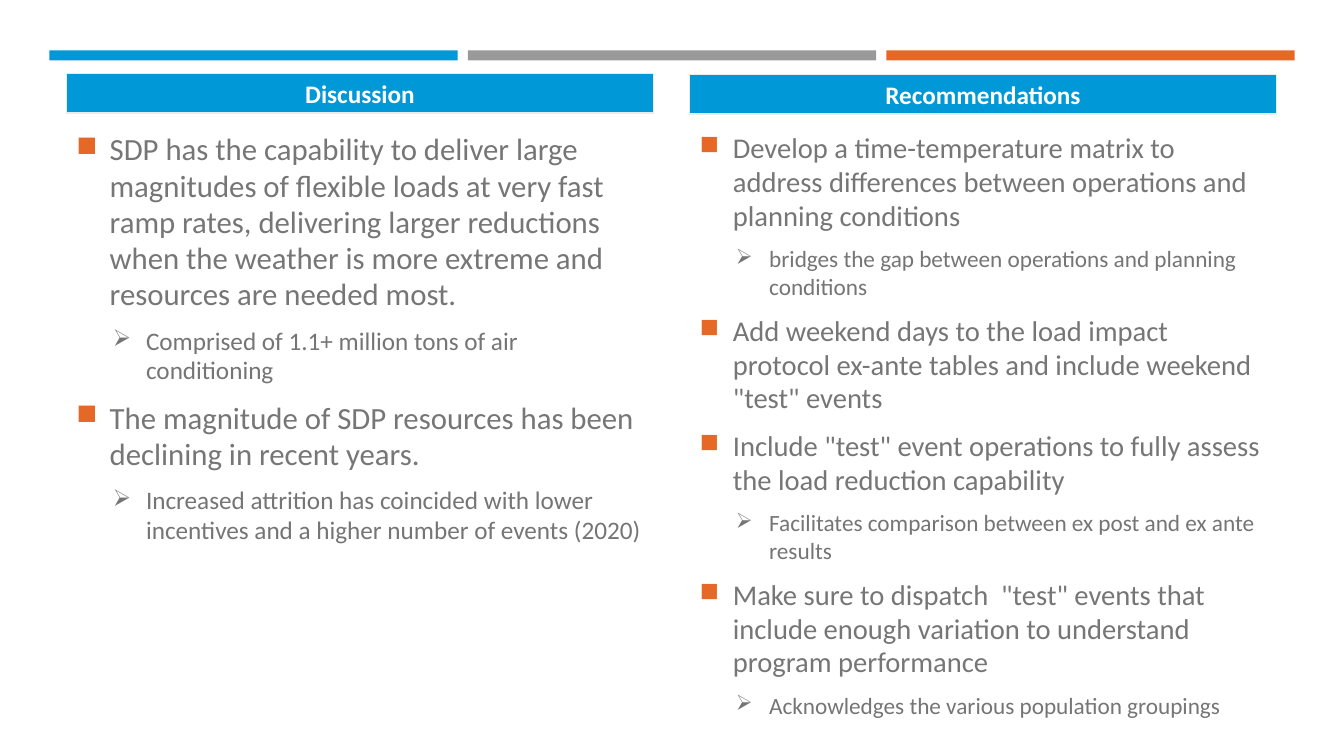
"""Build the discussion and recommendations slide."""
from dataclasses import dataclass

from lxml.etree import SubElement
from pptx import Presentation
from pptx.dml.color import RGBColor
from pptx.enum.shapes import MSO_SHAPE as Preset
from pptx.enum.text import MSO_ANCHOR as Anchor, PP_ALIGN as Align
from pptx.oxml.ns import qn
from pptx.util import Pt

PX = 9144
FONT = "Calibri"
COLORS = {
    "blue": "0098D7",
    "gray": "999999",
    "orange": "E66827",
    "outline": "EBEBEB",
    "text": "767676",
    "detail": "757575",
    "white": "FFFFFF",
}


@dataclass(frozen=True)
class Bullet:
    char: str
    color: str
    text_color: str
    margin: int


@dataclass(frozen=True)
class Column:
    title: str
    left: int
    header_top: int
    height: int
    sizes: tuple[float, float]
    items: tuple[tuple[int, str], ...]


BULLETS = (Bullet("■", "orange", "text", 33), Bullet("➢", "detail", "detail", 69))
HANGING = 33
COLUMN_WIDTH = 582
HEADER_HEIGHT = 39
BODY_TOP = 126
BARS = ("blue", "gray", "orange")
BAR_LEFT, BAR_TOP, BAR_WIDTH, BAR_HEIGHT, BAR_STEP = 49, 50, 405, 10, 415

COLUMNS = (
    Column("Discussion", 66, 73, 544, (22, 18), (
        (0, "SDP has the capability to deliver large magnitudes of flexible loads at very "
            "fast ramp rates, delivering larger reductions when the weather is more extreme "
            "and resources are needed most."),
        (1, "Comprised of 1.1+ million tons of air conditioning"),
        (0, "The magnitude of SDP resources has been declining in recent years."),
        (1, "Increased attrition has coincided with lower incentives and a higher number "
            "of events (2020)"),
    )),
    Column("Recommendations", 684, 74, 581, (20.4, 16.6), (
        (0, "Develop a time-temperature matrix to address differences between operations "
            "and planning conditions"),
        (1, "bridges the gap between operations and planning conditions"),
        (0, "Add weekend days to the load impact protocol ex-ante tables and include "
            "weekend \"test\" events"),
        (0, "Include \"test\" event operations to fully assess the load reduction capability"),
        (1, "Facilitates comparison between ex post and ex ante results"),
        (0, "Make sure to dispatch  \"test\" events that include enough variation to "
            "understand program performance"),
        (1, "Acknowledges the various population groupings"),
    )),
)


def rgb(name: str) -> RGBColor:
    return RGBColor.from_string(COLORS[name])


def add_bullet(paragraph, bullet: Bullet) -> None:
    properties = paragraph._p.get_or_add_pPr()
    properties.set("marL", str(bullet.margin * PX))
    properties.set("indent", str(-HANGING * PX))
    color = SubElement(properties, qn("a:buClr"))
    SubElement(color, qn("a:srgbClr"), val=COLORS[bullet.color])
    SubElement(properties, qn("a:buSzPct"), val="92000")
    SubElement(properties, qn("a:buChar"), char=bullet.char)


def write(paragraph, text: str, *, size: float, color: str, bold: bool = False,
          align: Align = Align.LEFT, before: float = 0, after: float = 0,
          line_spacing: float = 1.0, bullet: Bullet | None = None) -> None:
    paragraph.alignment = align
    paragraph.line_spacing = line_spacing
    paragraph.space_before = Pt(before)
    paragraph.space_after = Pt(after)
    if bullet:
        add_bullet(paragraph, bullet)
    run = paragraph.add_run()
    run.text = text
    run.font.name = FONT
    run.font.size = Pt(size)
    run.font.bold = bold
    run.font.color.rgb = rgb(color)


def add_rectangle(slide, left: int, top: int, width: int, height: int,
                  fill: str, line: str | None = None):
    shape = slide.shapes.add_shape(
        Preset.RECTANGLE, left * PX, top * PX, width * PX, height * PX)
    shape.shadow.inherit = False
    shape.fill.solid()
    shape.fill.fore_color.rgb = rgb(fill)
    if line:
        shape.line.color.rgb = rgb(line)
        shape.line.width = Pt(1)
    else:
        shape.line.fill.background()
    return shape


def add_body(slide, column: Column) -> None:
    box = slide.shapes.add_textbox(
        column.left * PX, BODY_TOP * PX, COLUMN_WIDTH * PX, column.height * PX)
    frame = box.text_frame
    frame.word_wrap = True
    for index, (level, text) in enumerate(column.items):
        paragraph = frame.add_paragraph() if index else frame.paragraphs[0]
        paragraph.level = level
        size = column.sizes[level]
        write(paragraph, text, size=size, color=BULLETS[level].text_color,
              before=round(size * 0.2, 1) if index else 0, after=6,
              line_spacing=0.98, bullet=BULLETS[level])


def add_header(slide, column: Column) -> None:
    header = add_rectangle(slide, column.left, column.header_top, COLUMN_WIDTH,
                           HEADER_HEIGHT, "blue", "outline")
    frame = header.text_frame
    frame.vertical_anchor = Anchor.MIDDLE
    frame.margin_left = frame.margin_right = 9 * PX
    frame.margin_top = frame.margin_bottom = 4 * PX
    write(frame.paragraphs[0], column.title, size=18, color="white",
          bold=True, align=Align.CENTER)


def main() -> None:
    presentation = Presentation()
    presentation.slide_width = 1333 * PX
    presentation.slide_height = 750 * PX
    slide = presentation.slides.add_slide(presentation.slide_layouts[6])
    for index, color in enumerate(BARS):
        add_rectangle(slide, BAR_LEFT + index * BAR_STEP, BAR_TOP,
                      BAR_WIDTH, BAR_HEIGHT, color)
    for column in COLUMNS:
        add_body(slide, column)
        add_header(slide, column)
    presentation.save("out.pptx")


if __name__ == "__main__":
    main()
